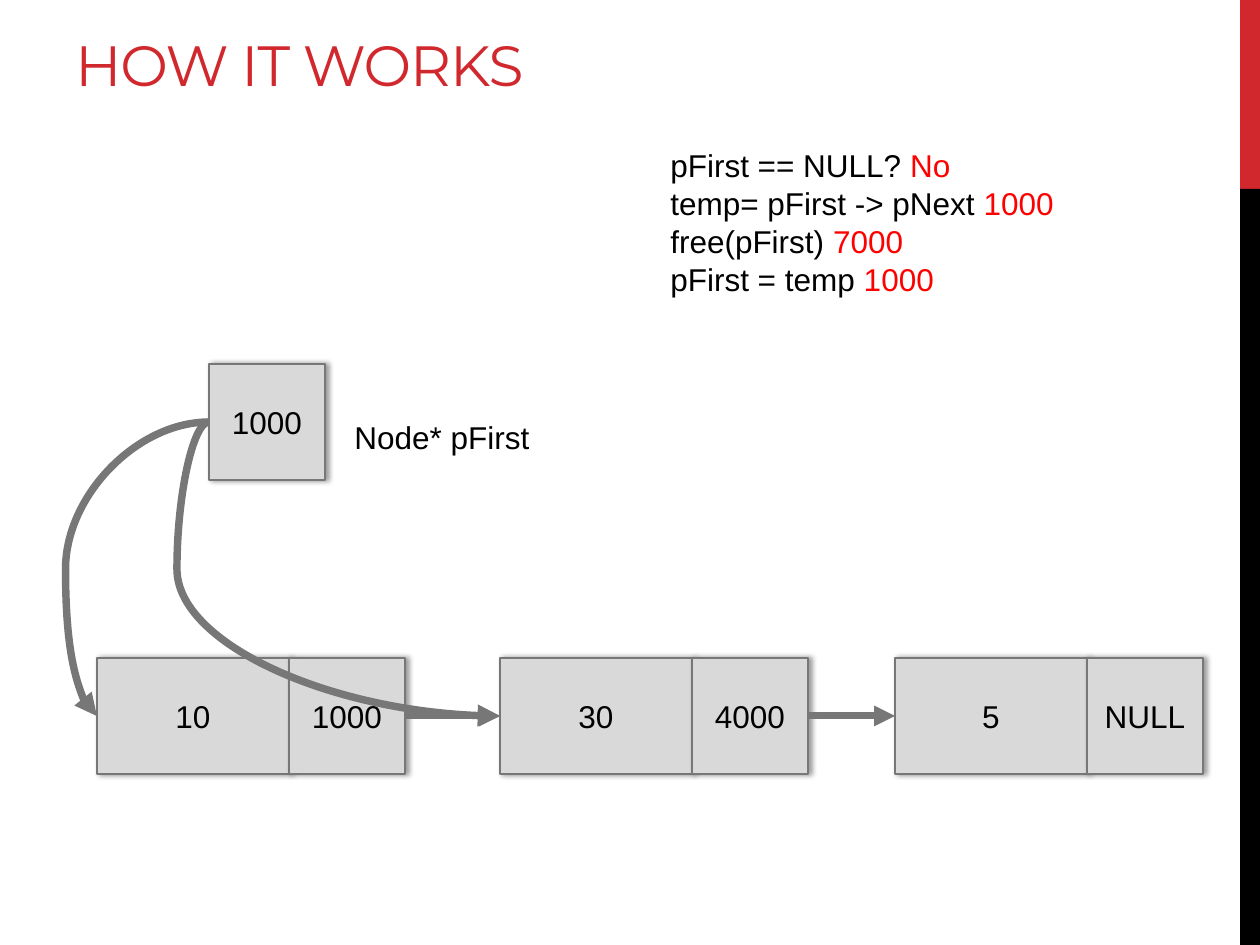
from dataclasses import dataclass

from lxml import etree
from pptx import Presentation
from pptx.dml.color import RGBColor
from pptx.enum.shapes import MSO_CONNECTOR, MSO_SHAPE
from pptx.enum.text import MSO_ANCHOR, PP_ALIGN
from pptx.oxml.ns import qn
from pptx.util import Emu, Pt

RECTANGLE = MSO_SHAPE.RECTANGLE
STRAIGHT, CURVE = MSO_CONNECTOR.STRAIGHT, MSO_CONNECTOR.CURVE
MIDDLE, BOTTOM, TOP = MSO_ANCHOR.MIDDLE, MSO_ANCHOR.BOTTOM, MSO_ANCHOR.TOP
CENTER = PP_ALIGN.CENTER
LEFT_SIDE, RIGHT_SIDE = 1, 3
EMU_PER_PX = 914400 / 126


@dataclass(frozen=True)
class Theme:
    accent: RGBColor = RGBColor(0xD1, 0x28, 0x2E)
    ink: RGBColor = RGBColor(0, 0, 0)
    answer: RGBColor = RGBColor(0xFF, 0, 0)
    cell: RGBColor = RGBColor(0xD9, 0xD9, 0xD9)
    outline: RGBColor = RGBColor(0x77, 0x77, 0x77)
    title_font: str = "Montserrat"
    body_font: str = "Arial"
    title_size: float = 32.4
    body_size: float = 18


@dataclass(frozen=True)
class Box:
    left: int
    top: int
    width: int
    height: int


@dataclass(frozen=True)
class Node:
    left: int
    value: str
    link: str


@dataclass(frozen=True)
class Step:
    code: str
    result: str


THEME = Theme()
CELL_SIDE = 116
VALUE_WIDTH = 192
NODE_TOP = 658
NODES = [Node(97, "10", "1000"), Node(500, "30", "4000"), Node(895, "5", "NULL")]
STEPS = [
    Step("pFirst == NULL? ", "No"),
    Step("temp= pFirst -> pNext ", "1000"),
    Step("free(pFirst)", " 7000"),
    Step("pFirst = temp ", "1000"),
]


def px(length: int) -> Emu:
    return Emu(round(length * EMU_PER_PX))


def bounds(box: Box) -> list[Emu]:
    return [px(n) for n in (box.left, box.top, box.width, box.height)]


def set_font(font, name: str, size: float, color: RGBColor) -> None:
    font.name, font.size = name, Pt(size)
    font.color.rgb = color


def add_bar(shapes, box: Box, color: RGBColor) -> None:
    bar = shapes.add_shape(RECTANGLE, *bounds(box))
    bar.shadow.inherit = False
    bar.fill.solid()
    bar.fill.fore_color.rgb = color
    bar.line.fill.background()


def add_shadow(shape) -> None:
    """Give the shape a soft shadow on its right."""
    shape.shadow.inherit = False
    effects = shape._element.spPr.find(qn("a:effectLst"))
    shadow = etree.SubElement(effects, qn("a:outerShdw"), blurRad=str(Pt(3.1)),
                              dist=str(Pt(1.8)), dir="0", rotWithShape="0")
    black = etree.SubElement(shadow, qn("a:srgbClr"), val="000000")
    etree.SubElement(black, qn("a:alpha"), val="40000")


def add_cell(shapes, box: Box, label: str):
    cell = shapes.add_shape(RECTANGLE, *bounds(box))
    add_shadow(cell)
    cell.fill.solid()
    cell.fill.fore_color.rgb = THEME.cell
    cell.line.color.rgb = THEME.outline
    cell.line.width = Pt(1)
    frame = cell.text_frame
    frame.vertical_anchor = MIDDLE
    paragraph = frame.paragraphs[0]
    paragraph.text = label
    paragraph.alignment = CENTER
    set_font(paragraph.font, THEME.body_font, THEME.body_size, THEME.ink)
    return cell


def add_node(shapes, node: Node):
    """Draw a list node and return its value cell and link cell."""
    group = shapes.add_group_shape().shapes
    value = add_cell(group, Box(node.left, NODE_TOP, VALUE_WIDTH, CELL_SIDE), node.value)
    link = add_cell(group, Box(node.left + VALUE_WIDTH, NODE_TOP, CELL_SIDE, CELL_SIDE),
                    node.link)
    return value, link


def add_arrow(shapes, source, source_side: int, target, width: float,
              bend: float | None = None) -> None:
    """Join source to target's left side; bend places the curve's middle."""
    kind = STRAIGHT if bend is None else CURVE
    arrow = shapes.add_connector(kind, 0, 0, 0, 0)
    arrow.begin_connect(source, source_side)
    arrow.end_connect(target, LEFT_SIDE)
    arrow.line.color.rgb = THEME.outline
    arrow.line.width = Pt(width)
    properties = arrow._element.spPr
    etree.SubElement(properties.find(qn("a:ln")), qn("a:tailEnd"), type="triangle")
    etree.SubElement(properties, qn("a:effectLst"))
    if bend is not None:
        guides = properties.find(qn("a:prstGeom")).find(qn("a:avLst"))
        etree.SubElement(guides, qn("a:gd"), name="adj1", fmla=f"val {round(bend * 100000)}")


def add_text_frame(shapes, box: Box, wrap: bool = True, anchor=TOP):
    frame = shapes.add_textbox(*bounds(box)).text_frame
    frame.word_wrap = wrap
    frame.vertical_anchor = anchor
    return frame


def add_title(shapes) -> None:
    title = add_text_frame(shapes, Box(63, 21, 1137, 83), anchor=BOTTOM).paragraphs[0]
    run = title.add_run()
    run.text = "HOW IT WORKS"
    run._r.get_or_add_rPr().set("spc", "-60")
    set_font(title.font, THEME.title_font, THEME.title_size, THEME.accent)


def add_steps(shapes) -> None:
    frame = add_text_frame(shapes, Box(658, 140, 489, 165))
    for index, step in enumerate(STEPS):
        paragraph = frame.add_paragraph() if index else frame.paragraphs[0]
        for text, color in ((step.code, THEME.ink), (step.result, THEME.answer)):
            run = paragraph.add_run()
            run.text = text
            run.font.color.rgb = color
        paragraph.font.name = THEME.body_font
        paragraph.font.size = Pt(THEME.body_size)


def main() -> None:
    deck = Presentation()
    deck.slide_width, deck.slide_height = px(1260), px(945)
    shapes = deck.slides.add_slide(deck.slide_layouts[6]).shapes

    add_bar(shapes, Box(1240, 0, 20, 189), THEME.accent)
    add_bar(shapes, Box(1240, 189, 20, 756), THEME.ink)
    add_title(shapes)

    cells = [add_node(shapes, node) for node in NODES]
    for (_, link), (next_value, _) in zip(cells, cells[1:]):
        add_arrow(shapes, link, RIGHT_SIDE, next_value, 4)

    pointer_name = add_text_frame(shapes, Box(342, 412, 202, 50), wrap=False).paragraphs[0]
    pointer_name.text = "Node* pFirst"
    set_font(pointer_name.font, THEME.body_font, THEME.body_size, THEME.ink)
    add_steps(shapes)

    pointer = add_cell(shapes, Box(209, 364, CELL_SIDE, CELL_SIDE), "1000")
    for (value, _), bend in zip(cells, (1.28, -0.11)):
        add_arrow(shapes, pointer, LEFT_SIDE, value, 4.25, bend)

    deck.save("out.pptx")


if __name__ == "__main__":
    main()
